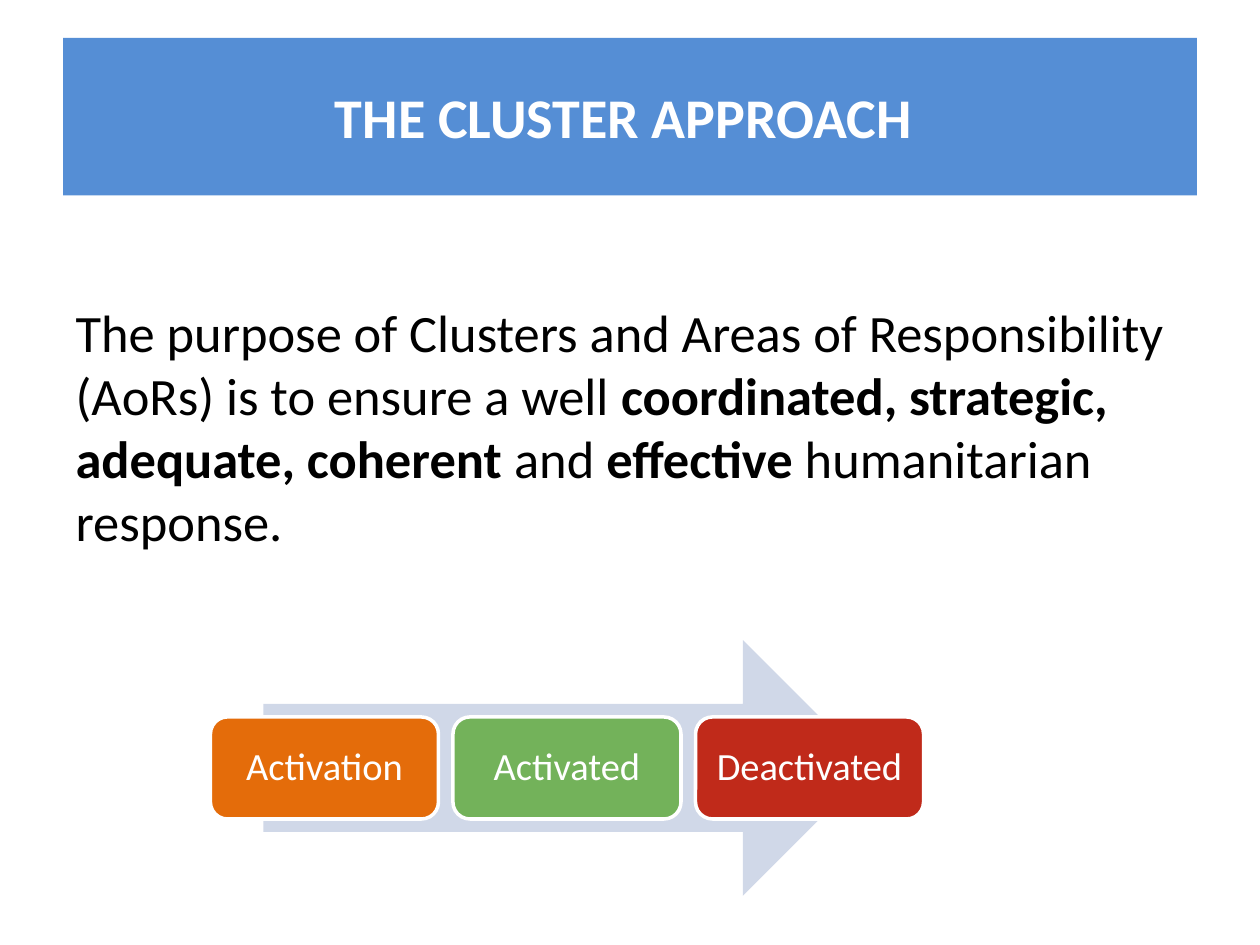
from lxml import etree
from pptx import Presentation
from pptx import util as u
from pptx.dml.color import RGBColor
from pptx.enum import shapes, text
from pptx.oxml.ns import qn

WIDTH, HEIGHT = 10, 7.5


def colour(value):
    return RGBColor.from_string(value)


class ClusterSlide:
    """Holds the style and the slide; lengths are shares of the slide's size."""
    font = "Calibri"

    def __init__(self, presentation):
        self.presentation = presentation
        self.slide = presentation.slides.add_slide(presentation.slide_layouts[1])

    def box(self, left, top, width, height):
        across, down = self.presentation.slide_width, self.presentation.slide_height
        return [round(share * size) for share, size in
                zip((left, top, width, height), (across, down, across, down))]

    def style(self, paragraph, size, ink, bold=None):
        font = paragraph.font
        font.name, font.size, font.bold = self.font, u.Pt(size), bold
        font.color.rgb = colour(ink)

    def place(self, placeholder, box):
        (placeholder.left, placeholder.top,
         placeholder.width, placeholder.height) = self.box(*box)
        placeholder.text_frame.auto_size = text.MSO_AUTO_SIZE.NONE
        return placeholder.text_frame

    def title(self, words, box, fill):
        title = self.slide.shapes.title
        frame = self.place(title, box)
        title.fill.solid()
        title.fill.fore_color.rgb = colour(fill)
        frame.text = words
        frame.vertical_anchor = text.MSO_ANCHOR.MIDDLE
        paragraph = frame.paragraphs[0]
        paragraph.alignment = text.PP_ALIGN.CENTER
        self.style(paragraph, 32, "FFFFFF", True)

    def body(self, parts, box):
        """Writes (words, bold) parts as one paragraph without a bullet."""
        paragraph = self.place(self.slide.placeholders[1], box).paragraphs[0]
        for words, bold in parts:
            run = paragraph.add_run()
            run.text, run.font.bold = words, bold
        properties = paragraph._p.get_or_add_pPr()
        properties.set("marL", "0")
        properties.set("indent", "0")
        etree.SubElement(properties, qn("a:buNone"))
        self.style(paragraph, 30, "000000")

    def shape(self, kind, box, fill, line=None):
        shape = self.slide.shapes.add_shape(kind, *self.box(*box))
        shape.shadow.inherit = False
        shape.fill.solid()
        shape.fill.fore_color.rgb = colour(fill)
        if line:
            shape.line.color.rgb = colour(line)
            shape.line.width = u.Pt(2)
        else:
            shape.line.fill.background()
        return shape

    def stage(self, words, box, fill):
        shape = self.shape(shapes.MSO_SHAPE.ROUNDED_RECTANGLE, box, fill, "FFFFFF")
        frame = shape.text_frame
        frame.margin_left = frame.margin_right = u.Inches(0.09)
        frame.word_wrap = True
        frame.vertical_anchor = text.MSO_ANCHOR.MIDDLE
        frame.text = words
        paragraph = frame.paragraphs[0]
        paragraph.alignment = text.PP_ALIGN.CENTER
        paragraph.line_spacing = 0.9
        self.style(paragraph, 22, "FFFFFF")


def main():
    presentation = Presentation()
    presentation.slide_width = u.Inches(WIDTH)
    presentation.slide_height = u.Inches(HEIGHT)
    slide = ClusterSlide(presentation)

    # Title band and purpose
    slide.title("THE CLUSTER APPROACH ", (0.05, 0.04, 0.9, 1 / 6), "558ED5")
    slide.body([
        ("The purpose of Clusters and Areas of Responsibility (AoRs) is to ensure a well ", False),
        ("coordinated, strategic, adequate, coherent", True),
        (" and ", False),
        ("effective", True),
        (" humanitarian response.", False),
    ], (0.05, 2.33 / HEIGHT, 0.9, 4.75 / HEIGHT))

    # Arrow behind the stages
    slide.shape(shapes.MSO_SHAPE.RIGHT_ARROW,
                (0.209, 5.08 / HEIGHT, 0.482, 2.03 / HEIGHT), "D0D8E8")

    # Stages at an equal pitch
    left, pitch = 0.167, 0.1925
    stages = [("Activation", "E46C0A"), ("Activated", "73B25A"), ("Deactivated", "C02A1A")]
    for index, (words, fill) in enumerate(stages):
        slide.stage(words, (left + index * pitch, 5.69 / HEIGHT, 0.181, 0.81 / HEIGHT), fill)

    presentation.save("out.pptx")


if __name__ == "__main__":
    main()
